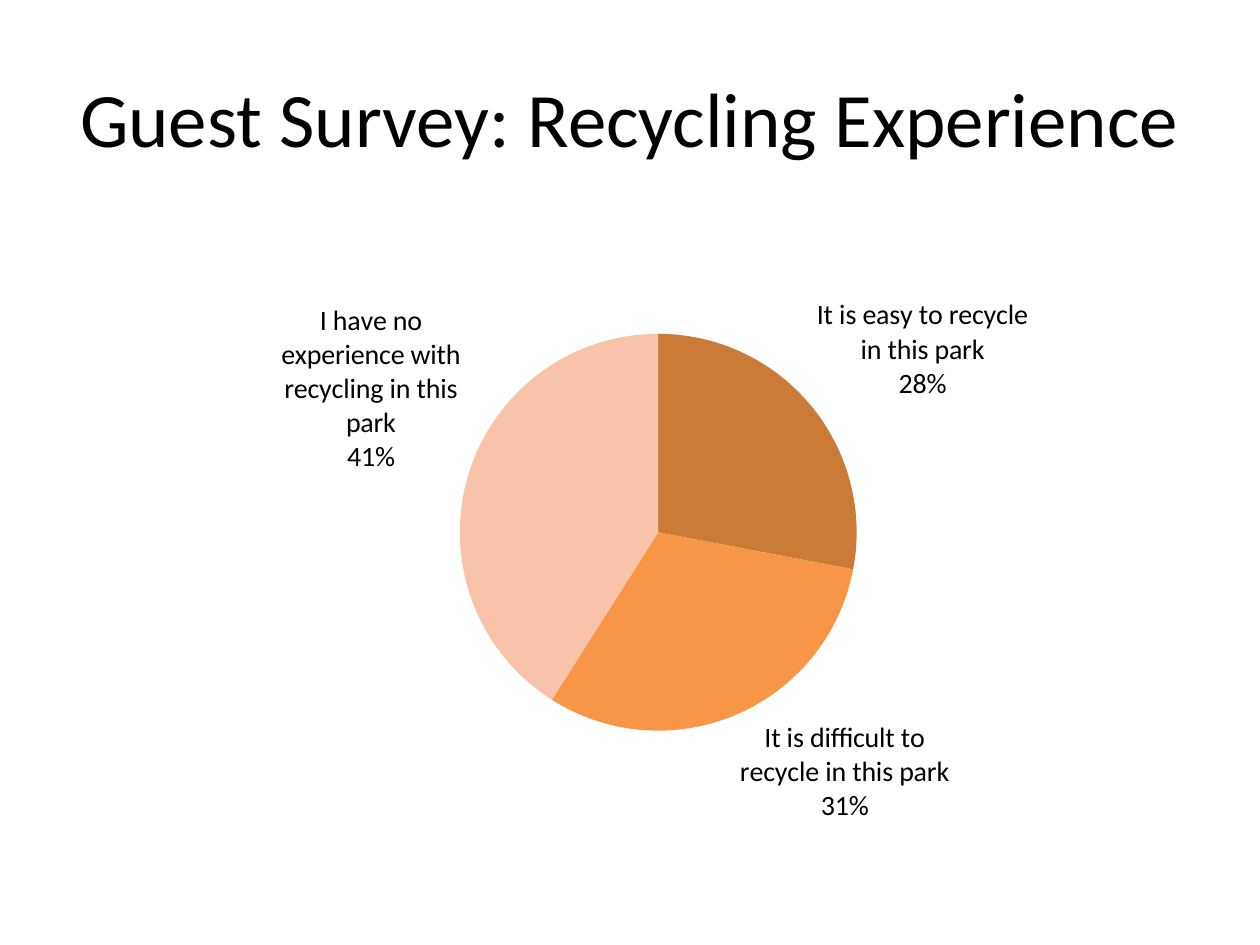
from dataclasses import dataclass

from lxml import etree
from pptx import Presentation
from pptx.chart.data import CategoryChartData
from pptx.dml.color import RGBColor
from pptx.enum.chart import XL_CHART_TYPE, XL_LABEL_POSITION
from pptx.enum.text import MSO_ANCHOR, PP_ALIGN
from pptx.oxml.ns import qn
from pptx.util import Inches, Pt

PIE = XL_CHART_TYPE.PIE
OUTSIDE = XL_LABEL_POSITION.OUTSIDE_END
MIDDLE = MSO_ANCHOR.MIDDLE
CENTER = PP_ALIGN.CENTER

FONT = "Calibri"
COLORS = {"text": "000000", "easy": "CB7B38", "hard": "F79646", "none": "F8C3A8"}


@dataclass
class Answer:
    text: str
    share: int
    color: str


ANSWERS = [
    Answer("It is easy to recycle in this park", 28, "easy"),
    Answer("It is difficult to recycle in this park", 31, "hard"),
    Answer("I have no experience with recycling in this park", 41, "none"),
]


def color(name: str) -> RGBColor:
    return RGBColor.from_string(COLORS[name])


def style(font, size: int) -> None:
    font.name = FONT
    font.size = Pt(size)
    font.color.rgb = color("text")


def add_title(slide, text: str) -> None:
    title = slide.shapes.title
    title.left, title.top = Inches(0.5), Inches(0.3)
    title.width, title.height = Inches(9), Inches(1.25)
    frame = title.text_frame
    frame.text = text
    frame.vertical_anchor = MIDDLE
    line = frame.paragraphs[0]
    line.alignment = CENTER
    style(line.runs[0].font, 44)


def place_plot(chart, left: float, top: float, width: float, height: float) -> None:
    """Fix the inner plot area, in fractions of the chart frame."""
    area = chart.plots[0]._element.getparent()
    layout = area.find(qn("c:layout"))
    if layout is None:
        layout = etree.Element(qn("c:layout"))
        area.insert(0, layout)
    manual = etree.SubElement(layout, qn("c:manualLayout"))
    values = {"layoutTarget": "inner", "xMode": "edge", "yMode": "edge",
              "x": left, "y": top, "w": width, "h": height}
    for tag, value in values.items():
        etree.SubElement(manual, qn(f"c:{tag}")).set("val", str(value))


def add_pie(slide, answers: list[Answer]) -> None:
    data = CategoryChartData()
    data.categories = [answer.text for answer in answers]
    data.add_series("Series 1", [answer.share for answer in answers])
    chart = slide.shapes.add_chart(
        PIE, Inches(0.5), Inches(1.75), Inches(9), Inches(4.95), data
    ).chart
    chart.has_legend = False
    chart.has_title = False
    style(chart.font, 10)
    place_plot(chart, 0.35, 0.18, 0.35, 0.64)

    # Slices
    plot = chart.plots[0]
    plot.vary_by_categories = True
    for index, answer in enumerate(answers):
        form = plot.series[0].points[index].format
        form.fill.solid()
        form.fill.fore_color.rgb = color(answer.color)
        form.line.fill.background()

    # Labels
    labels = plot.series[0].data_labels
    labels.show_category_name = True
    labels.show_percentage = True
    labels.show_value = False
    labels.position = OUTSIDE
    style(labels.font, 16)


def main() -> None:
    deck = Presentation()
    deck.slide_width, deck.slide_height = Inches(10), Inches(7.5)
    slide = deck.slides.add_slide(deck.slide_layouts[5])
    add_title(slide, "Guest Survey: Recycling Experience")
    add_pie(slide, ANSWERS)
    deck.save("out.pptx")


if __name__ == "__main__":
    main()
